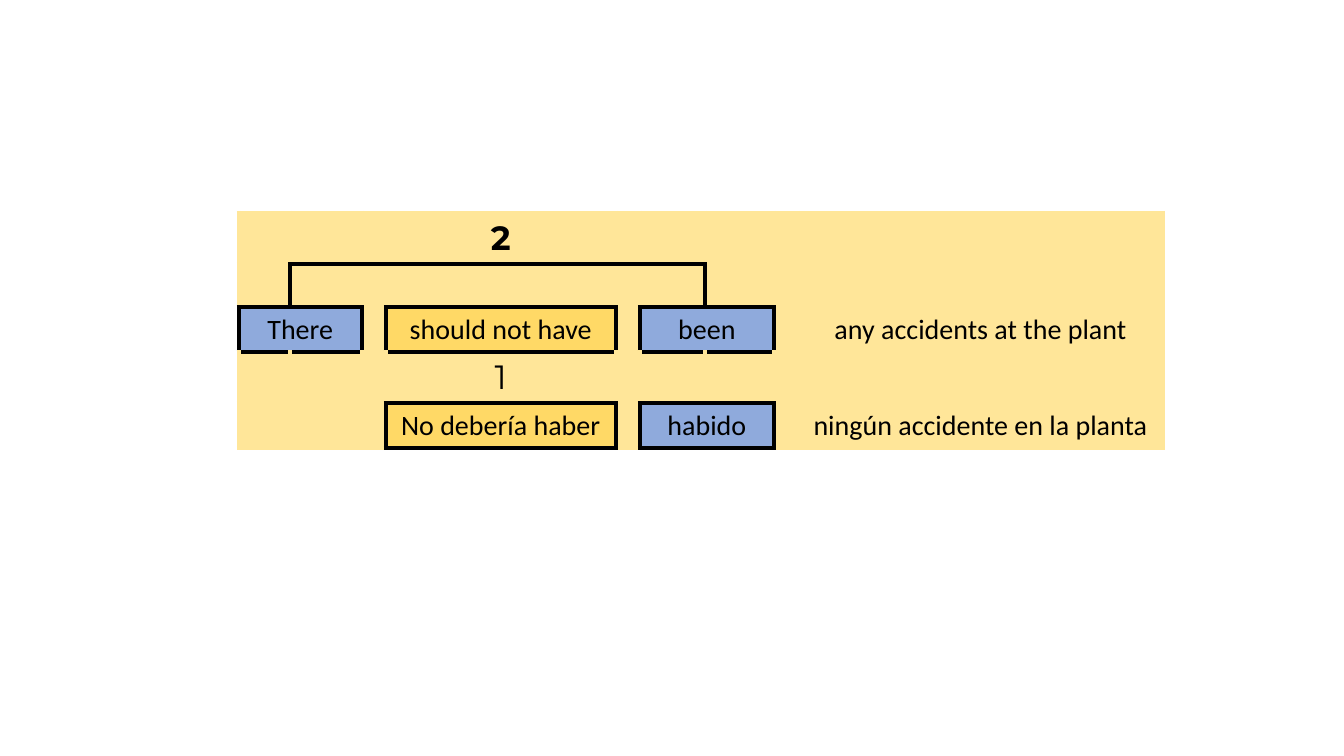
from lxml import etree
from pptx import Presentation
from pptx.dml.color import RGBColor
from pptx.enum.text import MSO_ANCHOR, PP_ALIGN
from pptx.oxml.ns import qn
from pptx.util import Pt

CENTER = PP_ALIGN.CENTER
MIDDLE = MSO_ANCHOR.MIDDLE
BLACK = RGBColor(0x00, 0x00, 0x00)
CREAM = RGBColor(0xFF, 0xE6, 0x99)
GOLD = RGBColor(0xFF, 0xD9, 0x66)
BLUE = RGBColor(0x8F, 0xAA, 0xDC)

COLUMN_WIDTHS = [36.7, 51.1, 16.6, 164.2, 16.6, 46.8, 49, 17.3, 260.6]
ROW_HEIGHTS = [36.5, 31, 32, 36.5, 32]
# Side of a cell: step to the neighbour and the neighbour's matching side
SIDES = {"L": (0, -1, "R"), "R": (0, 1, "L"), "T": (-1, 0, "B"), "B": (1, 0, "T")}

# Boxed words: row, first column, last column, text, fill
BOXES = [
    (2, 0, 1, "There", BLUE),
    (2, 3, 3, "should not have", GOLD),
    (2, 5, 6, "been", BLUE),
    (4, 3, 3, "No debería haber", GOLD),
    (4, 5, 6, "habido", BLUE),
]
# Plain text: row, column, text, font, size, bold
LABELS = [
    (0, 3, "2", "Montserrat", 24, True),
    (3, 3, "1", "Montserrat", 24, False),
    (2, 8, "any accidents at the plant", "Calibri", 20, False),
    (4, 8, "ningún accidente en la planta", "Calibri", 20, False),
]


def set_border(cell, side, color):
    ln = etree.SubElement(cell._tc.get_or_add_tcPr(), qn("a:ln" + side), w=str(Pt(3)))
    fill = etree.SubElement(ln, qn("a:solidFill"))
    etree.SubElement(fill, qn("a:srgbClr"), val=str(color))


def write(cell, text, font, size, bold):
    cell.text_frame.text = text
    p = cell.text_frame.paragraphs[0]
    p.alignment = CENTER
    r = p.runs[0]
    r.font.name = font
    r.font.size = Pt(size)
    r.font.bold = bold
    r.font.color.rgb = BLACK


prs = Presentation()
prs.slide_width, prs.slide_height = Pt(960), Pt(540)
s = prs.slides.add_slide(prs.slide_layouts[6])

# Table grid
rows, cols = len(ROW_HEIGHTS), len(COLUMN_WIDTHS)
table = s.shapes.add_table(rows, cols, Pt(170.6), Pt(152), Pt(sum(COLUMN_WIDTHS)),
                           Pt(sum(ROW_HEIGHTS))).table
table.first_row = table.horz_banding = False
for column, width in zip(table.columns, COLUMN_WIDTHS):
    column.width = Pt(width)
for row, height in zip(table.rows, ROW_HEIGHTS):
    row.height = Pt(height)

# Black edges: the bracket from "There" to "been", then the boxes
edges = {(1, col, "T") for col in range(1, 6)} | {(1, 1, "L"), (1, 5, "R")}
fills = {}
for row, first, last, text, color in BOXES:
    for col in range(first, last + 1):
        fills[row, col] = color
        edges |= {(row, col, side) for side in SIDES}
for row, col, side in list(edges):
    down, right, opposite = SIDES[side]
    edges.add((row + down, col + right, opposite))

# Borders and fills
for row in range(rows):
    for col in range(cols):
        cell = table.cell(row, col)
        cell.vertical_anchor = MIDDLE
        for side in SIDES:
            set_border(cell, side, BLACK if (row, col, side) in edges else CREAM)
        cell.fill.solid()
        cell.fill.fore_color.rgb = fills.get((row, col), CREAM)

# Words
for row, first, last, text, color in BOXES:
    if last > first:
        table.cell(row, first).merge(table.cell(row, last))
    write(table.cell(row, first), text, "Calibri", 20, False)
for row, col, text, font, size, bold in LABELS:
    write(table.cell(row, col), text, font, size, bold)

prs.save("out.pptx")
